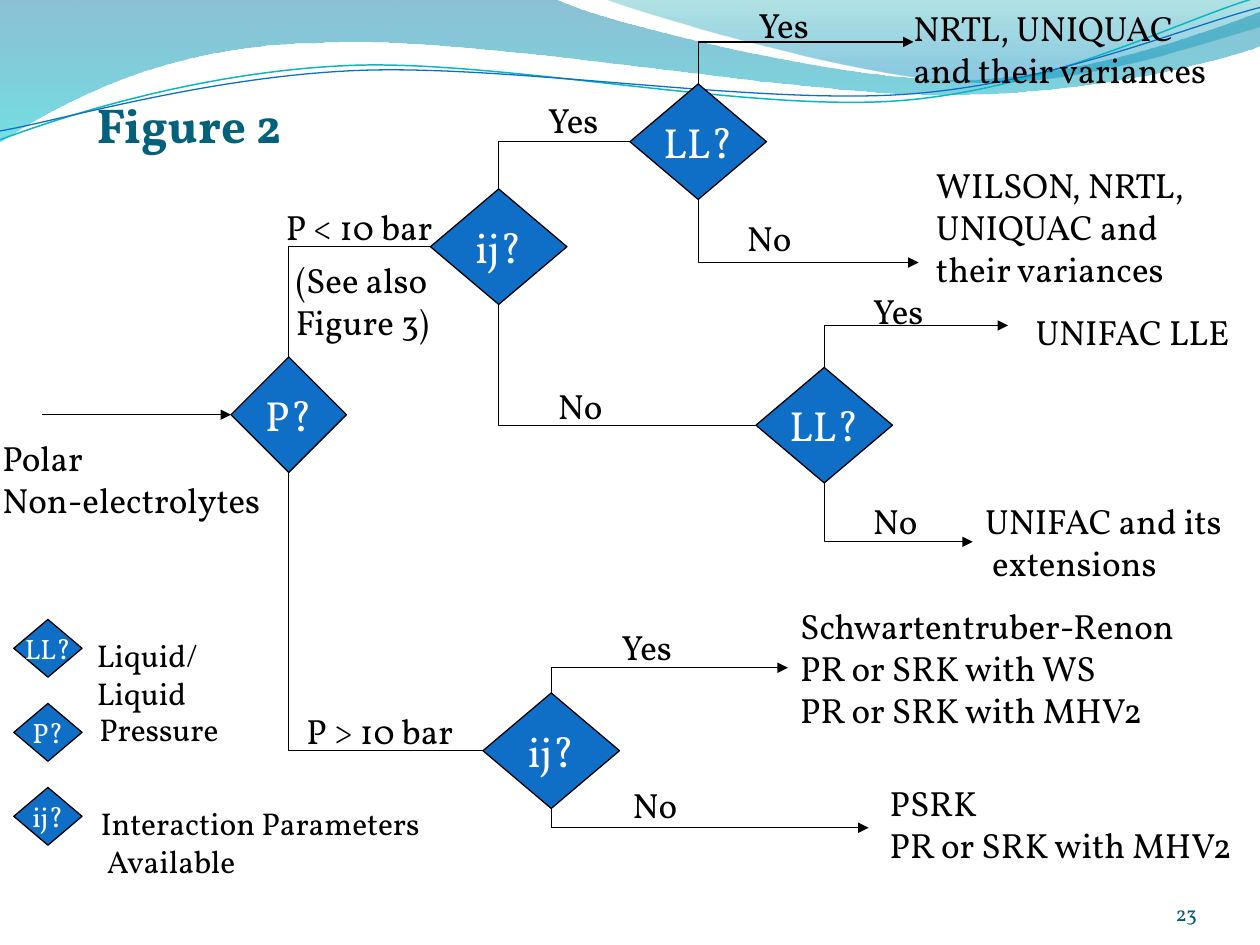
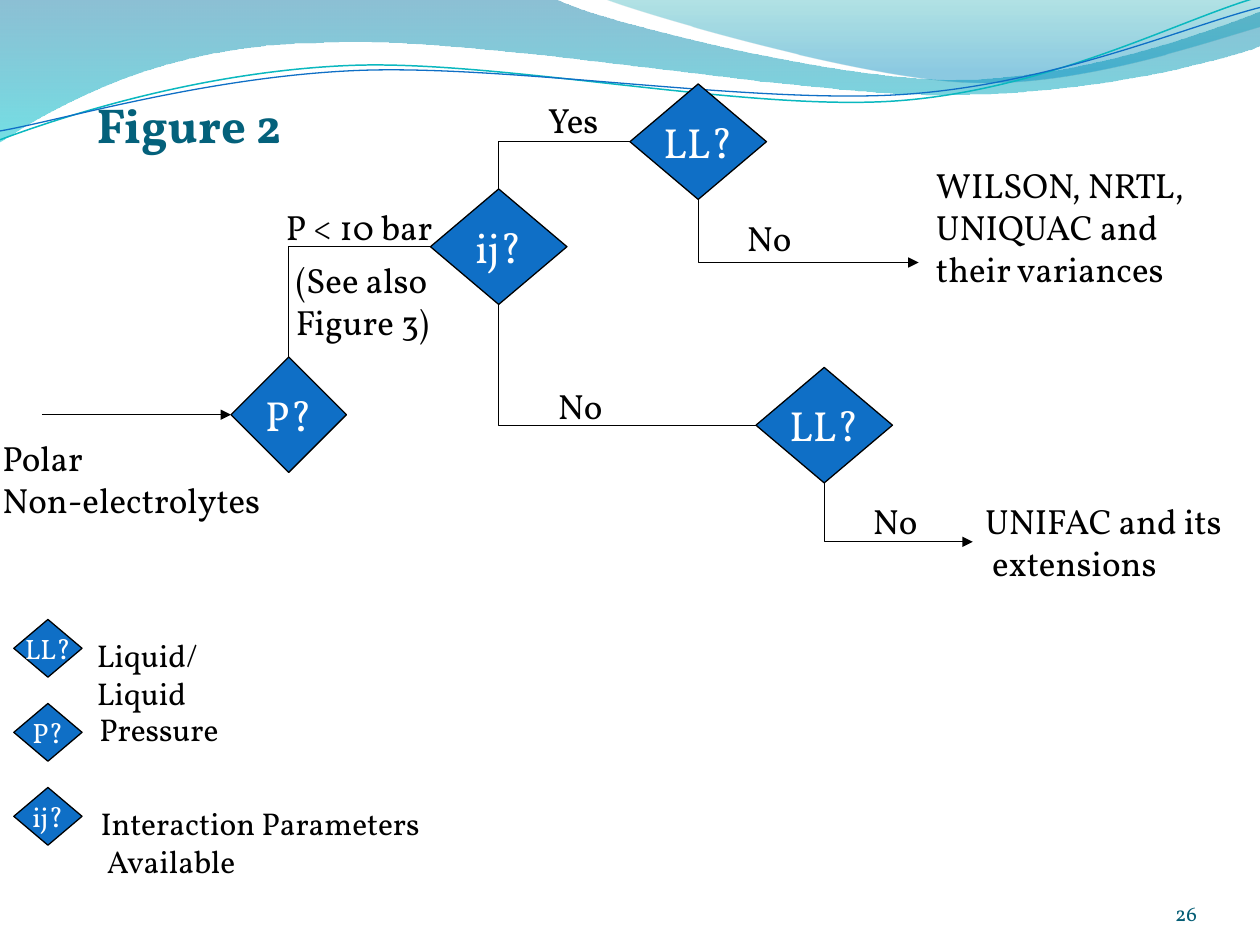
import dataclasses
import math

import pptx
import pptx.dml.color
import pptx.enum.shapes
import pptx.enum.text
import pptx.oxml
import pptx.oxml.ns
import pptx.util

Inches = pptx.util.Inches
ALIGN = pptx.enum.text.PP_ALIGN
ANCHOR = pptx.enum.text.MSO_ANCHOR
FIT = pptx.enum.text.MSO_AUTO_SIZE
JOIN = pptx.enum.shapes.MSO_CONNECTOR
TOP, LEFT, BOTTOM = 0, 1, 2


@dataclasses.dataclass(frozen=True)
class Theme:
    font: str = "Vollkorn"
    ink: str = "000000"
    paper: str = "FFFFFF"
    blue: str = "0F6FC6"
    teal: str = "0AB8BF"
    title: str = "04617B"
    page: str = "045D75"
    head_size: int = 28
    gate_size: int = 24
    text_size: int = 20
    key_size: int = 18
    mark_size: int = 16
    page_size: int = 12
    rule: float = 0.75


THEME = Theme()

BANDS = [
    ([(0, -0.01), (4.4, -0.01), (4.76, 0.17, 6.64, 0.63, 7.58, 0.63),
      (8.53, 0.63, 9.58, 0.26, 10, 0.09), (10.01, 0.36),
      (9.83, 0.44, 8.7, 0.76, 7.46, 0.75), (6.22, 0.75, 3.82, 0.28, 2.57, 0.34),
      (1.29, 0.35, 0.46, 0.83, -0.01, 1.13), (0, -0.01)],
     [(0, "0074A1", 45), (1, "00C6CF", 55)]),
    ([(4.79, -0.01), (5.09, 0.11, 6.82, 0.62, 7.69, 0.65),
      (8.56, 0.69, 9.61, 0.32, 10, 0.21), (10, 0), (4.79, -0.01)],
     [(0, "00A1A9", 30), (0.8, "008BBF", 45)]),
]
WAVE_TURN = 357.3
WAVES = [
    ([(0, 1.11), (0.48, 0.93, 1.58, 0.57, 2.77, 0.52),
      (3.95, 0.47, 5.93, 0.89, 7.13, 0.8), (8.33, 0.71, 9.38, 0.15, 9.98, -0.02)],
     (4.99, 0.57), THEME.teal, 0.85),
    ([(0, 1.04), (0.47, 0.96, 1.64, 0.61, 2.83, 0.56),
      (4.03, 0.51, 5.97, 0.83, 7.17, 0.75), (8.36, 0.67, 9.41, 0.21, 10, 0.06)],
     (5, 0.59), THEME.blue, 0.75),
]


def cell(count):
    return count / 12


def tint(code):
    return pptx.dml.color.RGBColor.from_string(code)


def make(tag, **attrs):
    node = pptx.oxml.parse_xml(f'<a:{tag} {pptx.oxml.ns.nsdecls("a")}/>')
    for key, value in attrs.items():
        node.set(key, value)
    return node


def stroke(line, color=THEME.ink, width=THEME.rule):
    line.color.rgb = tint(color)
    line.width = pptx.util.Pt(width)


def add_run(para, text, size, color, bold=False):
    run = para.add_run()
    run.text = text
    run.font.name = THEME.font
    run.font.size = pptx.util.Pt(size)
    run.font.bold = bold
    run.font.color.rgb = tint(color)


def outline(slide, steps, close):
    first, *rest = [(Inches(x), Inches(y)) for step in steps
                    for x, y in zip(step[::2], step[1::2])]
    pen = slide.shapes.build_freeform(*first, scale=1.0)
    pen.add_line_segments(rest, close=close)
    shape = pen.convert_to_shape()
    shape.shadow.inherit = False
    legs = iter(shape.element.xpath(".//a:lnTo"))
    for step in steps[1:]:
        parts = [next(legs) for _ in range(len(step) // 2)]
        if len(parts) == 3:
            curve = make("cubicBezTo")
            parts[0].addprevious(curve)
            for part in parts:
                curve.append(part[0])
                part.getparent().remove(part)
    return shape


def draw_band(slide, steps, stops):
    shape = outline(slide, steps, True)
    shape.line.fill.background()
    shape.fill.gradient()
    shape.fill.gradient_angle = 270
    for stop, (place, color, _) in zip(shape.fill.gradient_stops, stops):
        stop.position = place
        stop.color.rgb = tint(color)
    for node, (_, _, alpha) in zip(shape.element.xpath(".//a:gs/a:srgbClr"), stops):
        node.append(make("alpha", val=str(alpha * 1000)))
    return shape


def level(step, mid):
    turn = math.radians(-WAVE_TURN)
    cos, sin = math.cos(turn), math.sin(turn)
    flat = []
    for x, y in zip(step[::2], step[1::2]):
        dx, dy = x - mid[0], y - mid[1]
        flat += [mid[0] + dx * cos - dy * sin, mid[1] + dx * sin + dy * cos]
    return flat


def draw_wave(slide, steps, mid, color, width):
    shape = outline(slide, [level(step, mid) for step in steps], False)
    dx = Inches(mid[0]) - shape.left - shape.width / 2
    dy = Inches(mid[1]) - shape.top - shape.height / 2
    turn = math.radians(WAVE_TURN)
    cos, sin = math.cos(turn), math.sin(turn)
    shape.left += round(dx - dx * cos + dy * sin)
    shape.top += round(dy - dx * sin - dy * cos)
    shape.rotation = WAVE_TURN
    shape.fill.background()
    stroke(shape.line, color, width)
    return shape


def adorn(slide):
    tree = slide.slide_layout.shapes.element
    shapes = [draw_band(slide, *band) for band in BANDS]
    shapes += [draw_wave(slide, *wave) for wave in WAVES]
    for index, shape in enumerate(shapes):
        shape.element.xpath(".//p:cNvPr")[0].set("id", str(50 + index))
        tree.insert(2 + index, shape.element)


class Pane:
    def __init__(self, slide, left, top):
        self.shapes = slide.shapes
        self.left, self.top = left, top

    def spot(self, x, y):
        return Inches(self.left + x), Inches(self.top + y)

    def text(self, x, y, width, lines, size=THEME.text_size, wrap=False):
        height = 0.1 + len(lines) * size / 60
        box = self.shapes.add_textbox(*self.spot(x, y), Inches(width), Inches(height))
        frame = box.text_frame
        frame.word_wrap = wrap
        frame.auto_size = FIT.SHAPE_TO_FIT_TEXT
        for index, line in enumerate(lines):
            para = frame.add_paragraph() if index else frame.paragraphs[0]
            add_run(para, line, size, THEME.ink)

    def gate(self, x, y, label, width=cell(13), height=cell(11), size=THEME.gate_size):
        kind = pptx.enum.shapes.MSO_SHAPE.FLOWCHART_DECISION
        shape = self.shapes.add_shape(kind, *self.spot(x, y), Inches(width), Inches(height))
        shape.shadow.inherit = False
        shape.fill.solid()
        shape.fill.fore_color.rgb = tint(THEME.blue)
        stroke(shape.line)
        frame = shape.text_frame
        frame.word_wrap = False
        frame.vertical_anchor = ANCHOR.MIDDLE
        frame.paragraphs[0].alignment = ALIGN.CENTER
        add_run(frame.paragraphs[0], label, size, THEME.paper)
        return shape

    def link(self, kind, start, end, arrow):
        link = self.shapes.add_connector(kind, *start, *end)
        stroke(link.line)
        if arrow:
            link.element.xpath(".//a:ln")[0].append(make("tailEnd", type="triangle"))
        link.element.spPr.append(make("effectLst"))
        return link

    def bend(self, gate, side, goal):
        joined = not isinstance(goal, tuple)
        x0 = gate.left + gate.width // 2
        y0 = gate.top + (gate.height if side == BOTTOM else 0)
        x1, y1 = (goal.left, goal.top + goal.height // 2) if joined else self.spot(*goal)
        link = self.link(JOIN.ELBOW, (x0, y0), (x1, y1), not joined)
        if joined:
            link.begin_connect(gate, side)
            link.end_connect(goal, LEFT)
        wide, tall = x1 - x0, abs(y1 - y0)
        link.left, link.top = (x0 + x1 - tall) // 2, (y0 + y1 - wide) // 2
        link.width, link.height = tall, wide
        frame = link.element.xpath(".//a:xfrm")[0]
        for key in ("flipH", "flipV"):
            frame.attrib.pop(key, None)
        frame.set("rot", str(270 * 60000))
        if side == BOTTOM:
            frame.set("flipH", "1")
        link.element.xpath(".//a:prstGeom")[0].set("prst", "bentConnector2")

    def arm(self, gate, side, goal, x, y):
        word, width = ("Yes", 0.67) if side == TOP else ("No", 0.57)
        self.bend(gate, side, goal)
        self.text(x, y, width, [word])


def draw_low(pane, full):
    press = pane.gate(cell(22), cell(34), "P?", width=cell(11))
    pair = pane.gate(cell(41), cell(18), "ij?")
    upper = pane.gate(cell(60), cell(8), "LL?")
    lower = pane.gate(cell(72), cell(35), "LL?")

    start, end = pane.spot(cell(4), cell(39.5)), pane.spot(cell(22), cell(39.5))
    entry = pane.link(JOIN.STRAIGHT, start, end, True)
    entry.end_connect(press, LEFT)
    pane.text(-0.08, cell(41), 2.4, ["Polar", "Non-electrolytes"])

    pane.bend(press, TOP, pair)
    pane.text(2.17, 1.58, 1.44, ["P < 10 bar"])
    pane.text(2.25, 2, 1.39, ["(See also", "Figure 3)"])

    pane.arm(pair, TOP, upper, 4.25, 0.73)
    pane.arm(pair, BOTTOM, lower, 4.33, 3)
    pane.arm(upper, BOTTOM, (7.29, cell(25)), 5.83, 1.67)
    pane.text(7.33, 1.25, 2.41, ["WILSON, NRTL,", "UNIQUAC and", "their variances"])
    pane.arm(lower, BOTTOM, (7.72, 4.3), 6.83, cell(47))
    pane.text(7.72, cell(47), 2.28, ["UNIFAC and its", " extensions"])
    if full:
        pane.arm(upper, TOP, (7.25, cell(4)), 5.92, -0.02)
        pane.text(7.15, 0, 2.68, ["NRTL, UNIQUAC", "and their variances"])
        pane.arm(lower, TOP, (8, cell(31)), 6.83, 2.25)
        pane.text(8.12, cell(29), 1.88, ["UNIFAC LLE"])
    return press


def draw_high(pane, press):
    pair = pane.gate(cell(18), cell(9), "ij?")
    pane.bend(press, BOTTOM, pair)
    pane.text(0, 0.83, 1.44, ["P > 10 bar"])
    pane.arm(pair, TOP, (3.92, 0.55), 2.5, cell(2))
    pane.text(3.92, 0, 3.33,
              ["Schwartentruber-Renon", "PR or SRK with WS", "PR or SRK with MHV2"])
    pane.arm(pair, BOTTOM, (4.56, 1.82), 2.59, 1.42)
    pane.text(4.63, 1.4, 3.04, ["PSRK", "PR or SRK with MHV2"])


def draw_key(pane):
    rows = [("LL?", 0.56, cell(1), 1.65, ["Liquid/Liquid"], True),
            ("P?", 0.58, 0, 1.22, ["Pressure"], False),
            ("ij?", 0.59, cell(1), 2.96, ["Interaction Parameters", " Available"], False)]
    for index, (label, x, drop, width, lines, wrap) in enumerate(rows):
        y = cell(index * 8)
        pane.gate(0, y, label, cell(6.5), cell(5.5), THEME.mark_size)
        pane.text(x, y + drop, width, lines, THEME.key_size, wrap)


def draw_head(slide, title):
    head = slide.shapes.title
    head.left, head.top, head.width, head.height = map(Inches, (0, 0.58, 3, 0.92))
    frame = head.text_frame
    frame.auto_size = FIT.NONE
    frame.word_wrap = True
    frame.vertical_anchor = ANCHOR.MIDDLE
    para = frame.paragraphs[0]
    para.alignment = ALIGN.CENTER
    para.line_spacing = 0.7
    add_run(para, title, THEME.head_size, THEME.title, True)


def draw_foot(slide, page):
    box = slide.shapes.add_textbox(*map(Inches, (8.67, 6.95, 0.83, 0.4)))
    frame = box.text_frame
    frame.word_wrap = True
    frame.margin_left = frame.margin_right = frame.margin_top = frame.margin_bottom = 0
    frame.vertical_anchor = ANCHOR.BOTTOM
    frame.paragraphs[0].alignment = ALIGN.RIGHT
    add_run(frame.paragraphs[0], page, THEME.page_size, THEME.page)


def draw_slide(slide, page, full):
    press = draw_low(Pane(slide, 0, 0), full)
    if full:
        draw_high(Pane(slide, cell(28), cell(57)), press)
    draw_key(Pane(slide, 0.11, cell(59)))
    draw_head(slide, "Figure 2")
    draw_foot(slide, page)


def main():
    deck = pptx.Presentation()
    deck.slide_width, deck.slide_height = Inches(10), Inches(7.5)
    layout = deck.slide_layouts[5]
    slides = [deck.slides.add_slide(layout) for _ in range(2)]
    adorn(slides[0])
    draw_slide(slides[0], "23", True)
    draw_slide(slides[1], "26", False)
    deck.save("out.pptx")


if __name__ == "__main__":
    main()
